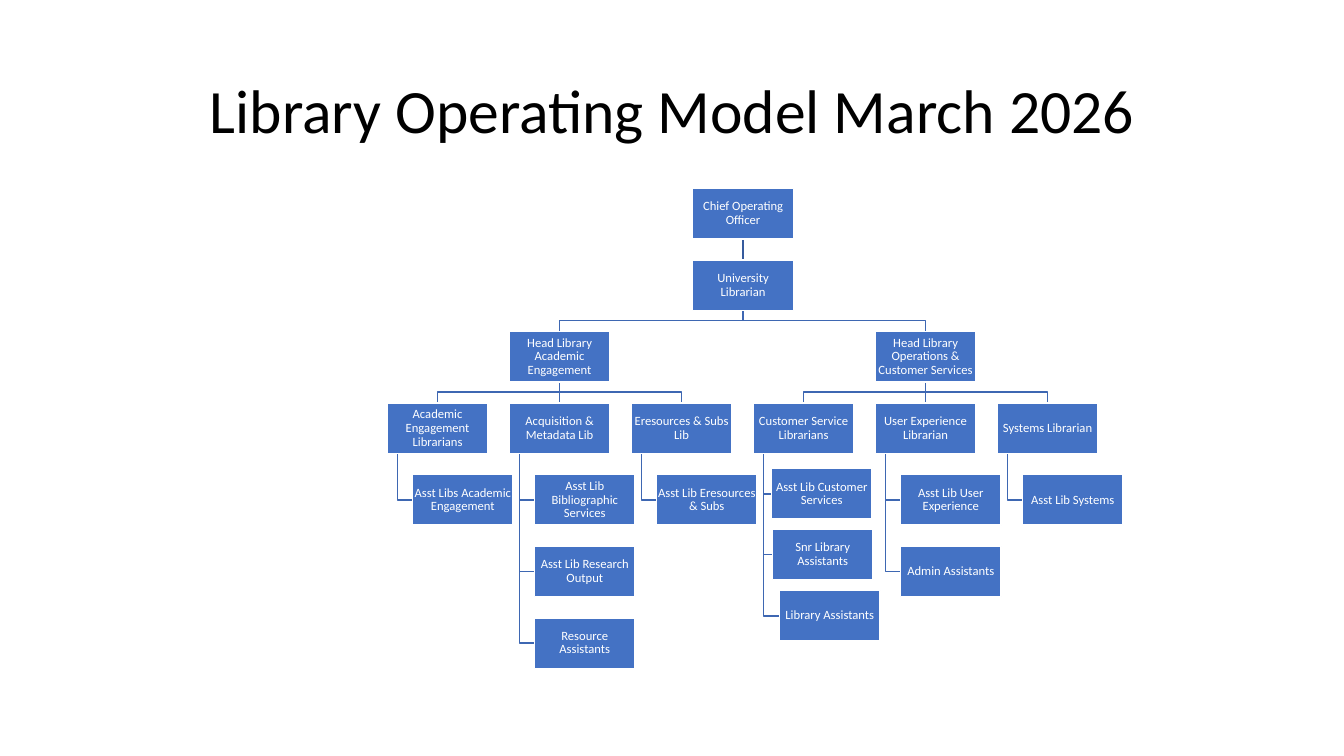
from dataclasses import dataclass

from lxml.etree import SubElement
from pptx import Presentation
from pptx.dml.color import RGBColor
from pptx.enum.shapes import MSO_CONNECTOR, MSO_SHAPE
from pptx.enum.text import MSO_ANCHOR, PP_ALIGN
from pptx.oxml.ns import qn
from pptx.util import Pt

EMU_PER_PX = 9144
BOX_WIDTH, BOX_HEIGHT = 100, 50
FIRST_COLUMN, COLUMN_PITCH = 384, 121
FIRST_ROW, ROW_PITCH = 187, 71
DIRECTOR_LEFT = 687
BRANCH_DROP = 10
SPINE_INDENT, STAFF_INDENT = 10, 25


@dataclass(frozen=True)
class Theme:
    font: str = "Calibri"
    title_size: int = 44
    box_size: int = 9
    line_width: int = 1
    title: RGBColor = RGBColor(0x00, 0x00, 0x00)
    box: RGBColor = RGBColor(0x44, 0x72, 0xC4)
    white: RGBColor = RGBColor(0xFF, 0xFF, 0xFF)
    branch: RGBColor = RGBColor(0x3E, 0x67, 0xB2)
    top_branch: RGBColor = RGBColor(0x36, 0x5B, 0x9D)


THEME = Theme()

DIVISIONS = [
    ("Head Library Academic Engagement", 1, [
        ("Academic Engagement Librarians", ["Asst Libs Academic Engagement"]),
        ("Acquisition & Metadata Lib", [
            "Asst Lib Bibliographic Services",
            "Asst Lib Research Output",
            "Resource Assistants",
        ]),
        ("Eresources & Subs Lib", ["Asst Lib Eresources & Subs"]),
    ]),
    ("Head Library Operations & Customer Services", 4, [
        ("Customer Service Librarians", [
            "Asst Lib Customer Services",
            "Snr Library Assistants",
            "Library Assistants",
        ]),
        ("User Experience Librarian", ["Asst Lib User Experience", "Admin Assistants"]),
        ("Systems Librarian", ["Asst Lib Systems"]),
    ]),
]

MOVED_STAFF = {
    "Asst Lib Customer Services": (765, 465),
    "Snr Library Assistants": (766, 525),
    "Library Assistants": (773, 586),
}


def px(length):
    return length * EMU_PER_PX


def column_left(column):
    return FIRST_COLUMN + column * COLUMN_PITCH


def row_top(row):
    return FIRST_ROW + row * ROW_PITCH


def write_text(shape, text, size, color):
    frame = shape.text_frame
    frame.word_wrap = True
    frame.vertical_anchor = MSO_ANCHOR.MIDDLE
    paragraph = frame.paragraphs[0]
    paragraph.alignment = PP_ALIGN.CENTER
    paragraph.line_spacing = 0.9
    run = paragraph.add_run()
    run.text = text
    run.font.name = THEME.font
    run.font.size = Pt(size)
    run.font.color.rgb = color


def style_line(shape, color):
    shape.line.color.rgb = color
    shape.line.width = Pt(THEME.line_width)


def add_title(slide, text):
    shape = slide.shapes.add_textbox(px(92), px(40), px(1150), px(145))
    write_text(shape, text, THEME.title_size, THEME.title)


def add_box(slide, text, left, top):
    shape = slide.shapes.add_shape(
        MSO_SHAPE.RECTANGLE, px(left), px(top), px(BOX_WIDTH), px(BOX_HEIGHT))
    shape.shadow.inherit = False
    shape.fill.solid()
    shape.fill.fore_color.rgb = THEME.box
    style_line(shape, THEME.white)
    frame = shape.text_frame
    frame.margin_left = frame.margin_right = px(1)
    frame.margin_top = frame.margin_bottom = px(1)
    write_text(shape, text, THEME.box_size, THEME.white)
    return shape


def add_stem(slide, parent, child, color):
    line = slide.shapes.add_connector(MSO_CONNECTOR.STRAIGHT, 0, 0, 0, 0)
    line.begin_connect(parent, 2)
    line.end_connect(child, 0)
    style_line(line, color)
    SubElement(line.element.spPr, qn("a:effectLst"))
    parent.element.addprevious(line.element)


def add_elbow(slide, parent, points):
    builder = slide.shapes.build_freeform(*points[0], scale=EMU_PER_PX)
    builder.add_line_segments(points[1:], close=False)
    shape = builder.convert_to_shape()
    shape.shadow.inherit = False
    shape.fill.background()
    style_line(shape, THEME.branch)
    parent.element.addprevious(shape.element)


def add_branch(slide, parent, child):
    if parent.left == child.left:
        add_stem(slide, parent, child, THEME.branch)
        return
    start_x, end_x = (box.left // EMU_PER_PX + BOX_WIDTH // 2 for box in (parent, child))
    start_y = parent.top // EMU_PER_PX + BOX_HEIGHT
    end_y = child.top // EMU_PER_PX
    bend_y = start_y + BRANCH_DROP
    add_elbow(slide, parent, [
        (start_x, start_y), (start_x, bend_y), (end_x, bend_y), (end_x, end_y)])


def add_staff(slide, librarian, names):
    left = librarian.left // EMU_PER_PX
    spine_x = left + SPINE_INDENT
    start_y = librarian.top // EMU_PER_PX + BOX_HEIGHT
    for row, name in enumerate(names, 4):
        staff_left, staff_top = MOVED_STAFF.get(name, (left + STAFF_INDENT, row_top(row)))
        add_box(slide, name, staff_left, staff_top)
        middle_y = staff_top + BOX_HEIGHT // 2
        add_elbow(slide, librarian, [
            (spine_x, start_y), (spine_x, middle_y), (staff_left, middle_y)])


def add_division(slide, director, name, column, teams):
    head = add_box(slide, name, column_left(column), row_top(2))
    add_branch(slide, director, head)
    for team_column, (team, staff) in enumerate(teams, column - 1):
        librarian = add_box(slide, team, column_left(team_column), row_top(3))
        add_branch(slide, head, librarian)
        add_staff(slide, librarian, staff)


def main():
    presentation = Presentation()
    presentation.slide_width = px(1333)
    presentation.slide_height = px(750)
    slide = presentation.slides.add_slide(presentation.slide_layouts[6])
    add_title(slide, "Library Operating Model March 2026")
    chief = add_box(slide, "Chief Operating Officer", DIRECTOR_LEFT, row_top(0))
    director = add_box(slide, "University Librarian", DIRECTOR_LEFT, row_top(1))
    add_stem(slide, chief, director, THEME.top_branch)
    for name, column, teams in DIVISIONS:
        add_division(slide, director, name, column, teams)
    presentation.save("out.pptx")


if __name__ == "__main__":
    main()
